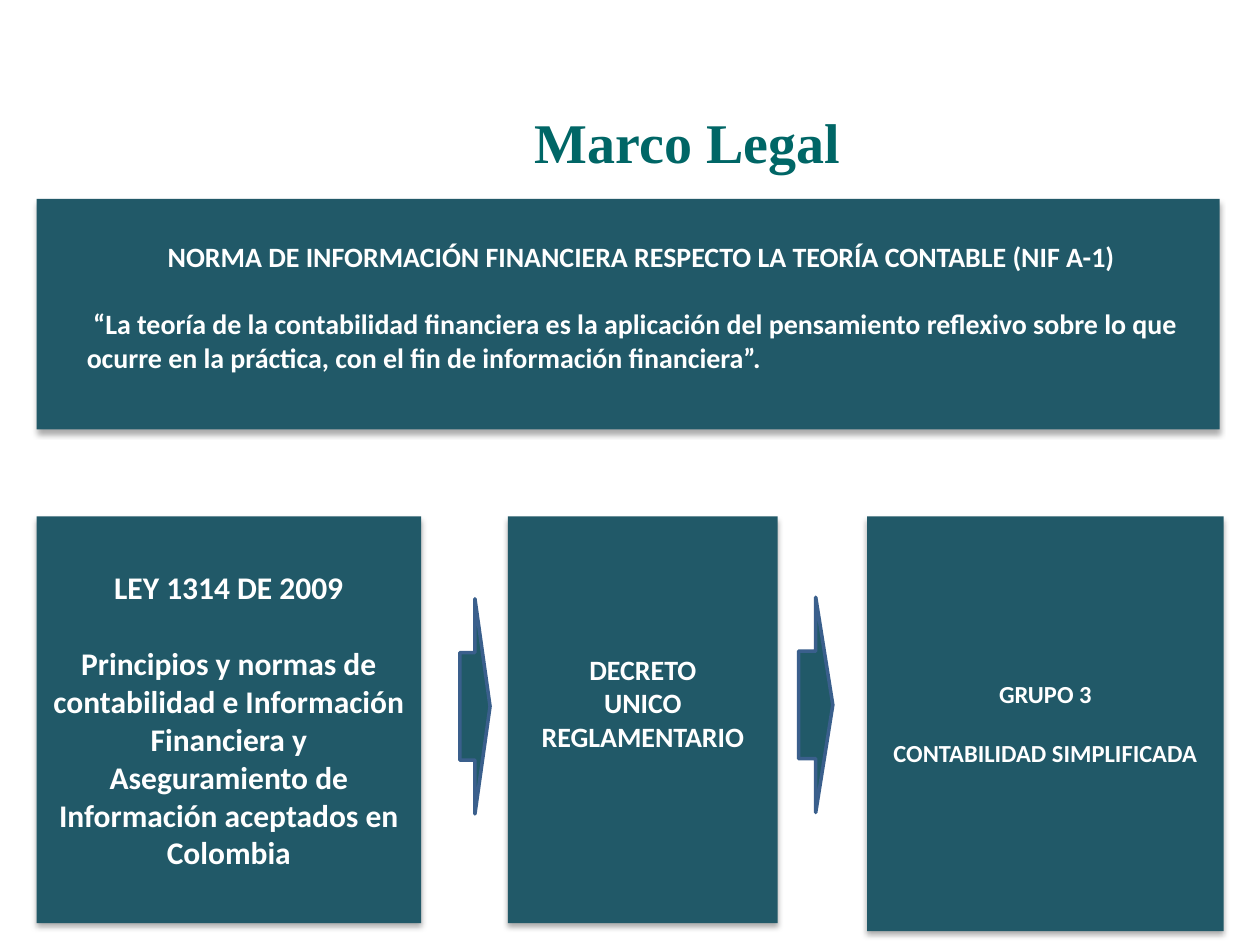
from lxml.etree import SubElement
from pptx import Presentation
from pptx.dml.color import RGBColor
from pptx.enum.shapes import MSO_SHAPE as Shape
from pptx.enum.text import MSO_ANCHOR as Anchor, PP_ALIGN as Align
from pptx.oxml.ns import qn
from pptx.util import Cm, Pt

COLORS = {"box": "215968", "edge": "3A5F8C", "title": "006666",
          "text": "FFFFFF", "shadow": "000000"}


class LegalSlide:
    """Holds the style and the current slide, and draws its elements."""

    def __init__(self, slide):
        self.slide = slide
        self.font = "Calibri"

    def color(self, name):
        return RGBColor.from_string(COLORS[name])

    def fill_text(self, frame, lines, size, align=Align.CENTER, gap=0, color="text", font=None):
        frame.word_wrap = True
        frame.text = "\n".join(lines)
        for number, paragraph in enumerate(frame.paragraphs):
            paragraph.alignment = align
            if number:
                paragraph.space_before = Pt(gap)
            for run in paragraph.runs:
                run.font.name = font or self.font
                run.font.size = Pt(size)
                run.font.bold = True
                run.font.color.rgb = self.color(color)

    def title(self, text, left, top, width, height):
        heading = self.slide.shapes.title
        heading.left, heading.top = Cm(left), Cm(top)
        heading.width, heading.height = Cm(width), Cm(height)
        heading.text_frame.vertical_anchor = Anchor.TOP
        self.fill_text(heading.text_frame, [text], 32, Align.RIGHT,
                       color="title", font="Times New Roman")

    def shape(self, kind, left, top, width, height):
        figure = self.slide.shapes.add_shape(kind, Cm(left), Cm(top), Cm(width), Cm(height))
        figure.shadow.inherit = False
        figure.fill.solid()
        figure.fill.fore_color.rgb = self.color("box")
        return figure

    def panel(self, left, top, width, height):
        box = self.shape(Shape.RECTANGLE, left, top, width, height)
        box.line.fill.background()
        effects = box._element.spPr.find(qn("a:effectLst"))
        shadow = SubElement(effects, qn("a:outerShdw"), blurRad=str(Pt(3.5)),
                            dist=str(Pt(2.2)), dir="5400000", rotWithShape="0")
        shade = SubElement(shadow, qn("a:srgbClr"), val=COLORS["shadow"])
        SubElement(shade, qn("a:alpha"), val="32000")
        return box

    def card(self, lines, size, left, width, height, gap=0, lift=0):
        frame = self.panel(left, 10.41, width, height).text_frame
        frame.vertical_anchor = Anchor.MIDDLE
        frame.margin_bottom = Cm(0.13 + lift)
        self.fill_text(frame, lines, size, gap=gap)

    def arrow(self, left, top, width):
        pointer = self.shape(Shape.RIGHT_ARROW, left, top, width, 4.34)
        pointer.line.color.rgb = self.color("edge")
        pointer.line.width = Pt(2)

    def note(self, lines, size, left, top, width, height, gap):
        box = self.slide.shapes.add_textbox(Cm(left), Cm(top), Cm(width), Cm(height))
        self.fill_text(box.text_frame, lines, size, gap=gap)
        quote = box.text_frame.paragraphs[-1]
        quote.alignment = Align.LEFT
        quote._p.get_or_add_pPr().set("indent", str(Cm(0.13)))


def main():
    deck = Presentation()
    deck.slide_width, deck.slide_height = Cm(25.4), Cm(19.05)
    legal = LegalSlide(deck.slides.add_slide(deck.slide_layouts[5]))
    legal.title("Marco Legal", -1.85, 2.03, 19.05, 1.55)
    legal.panel(0.74, 4.01, 23.85, 4.65)
    legal.note(["NORMA DE INFORMACIÓN FINANCIERA RESPECTO LA TEORÍA CONTABLE (NIF A-1)",
                "“La teoría de la contabilidad financiera es la aplicación del pensamiento "
                "reflexivo sobre lo que ocurre en la práctica, con el fin de información "
                "financiera”."], 16, 1.5, 4.7, 22.86, 3.84, gap=19.5)
    legal.card(["LEY 1314 DE 2009",
                "Principios y normas de contabilidad e Información Financiera y "
                "Aseguramiento de Información aceptados en Colombia"],
               18, 0.74, 7.75, 8.2, gap=22)
    legal.card(["DECRETO", "UNICO", "REGLAMENTARIO"], 16, 10.24, 5.44, 8.2, lift=0.69)
    legal.card(["GRUPO 3", "CONTABILIDAD SIMPLIFICADA"], 14, 17.48, 7.19, 8.36, gap=17)
    legal.arrow(9.27, 12.07, 0.61)
    legal.arrow(16.1, 12.04, 0.69)
    deck.save("out.pptx")


if __name__ == "__main__":
    main()
